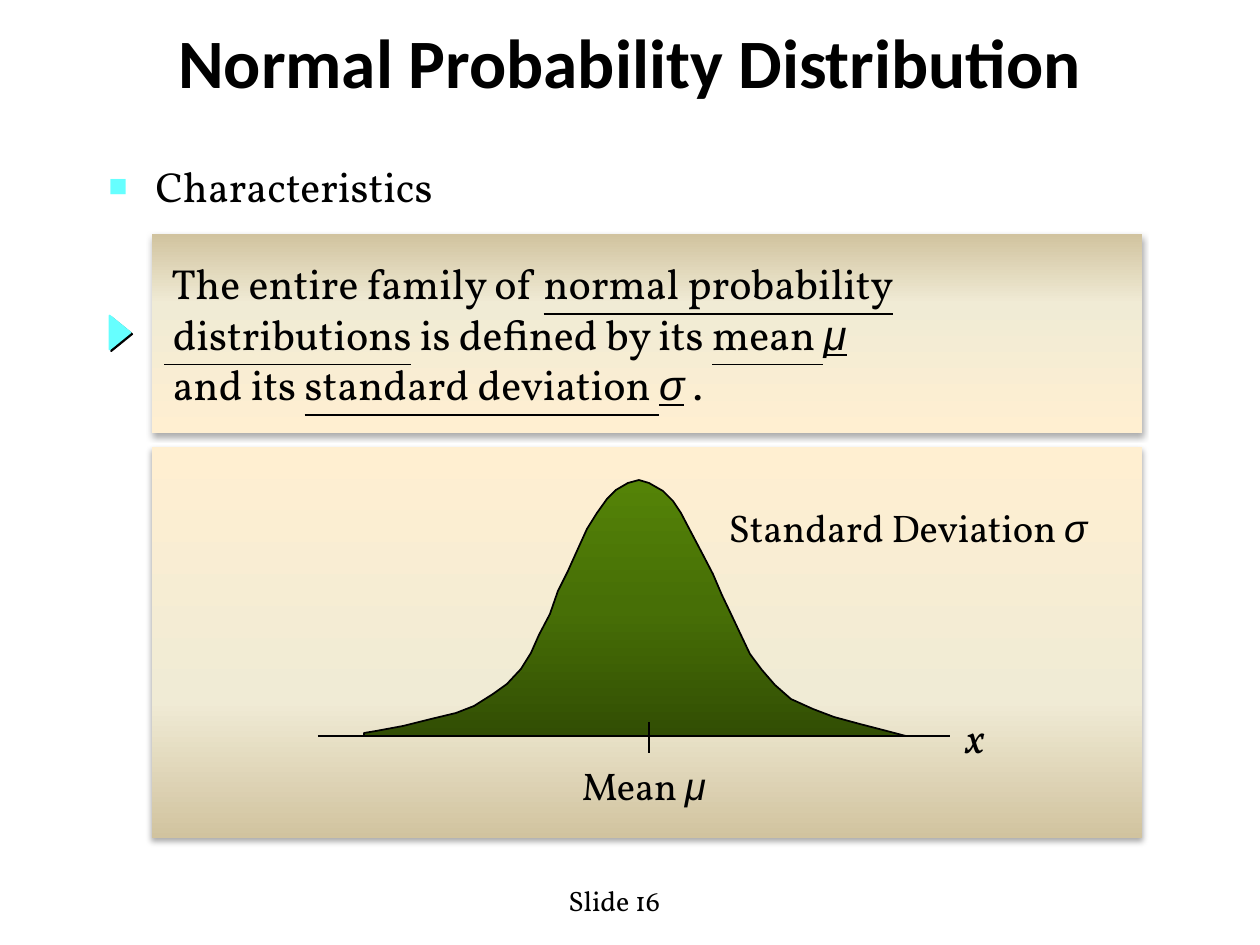
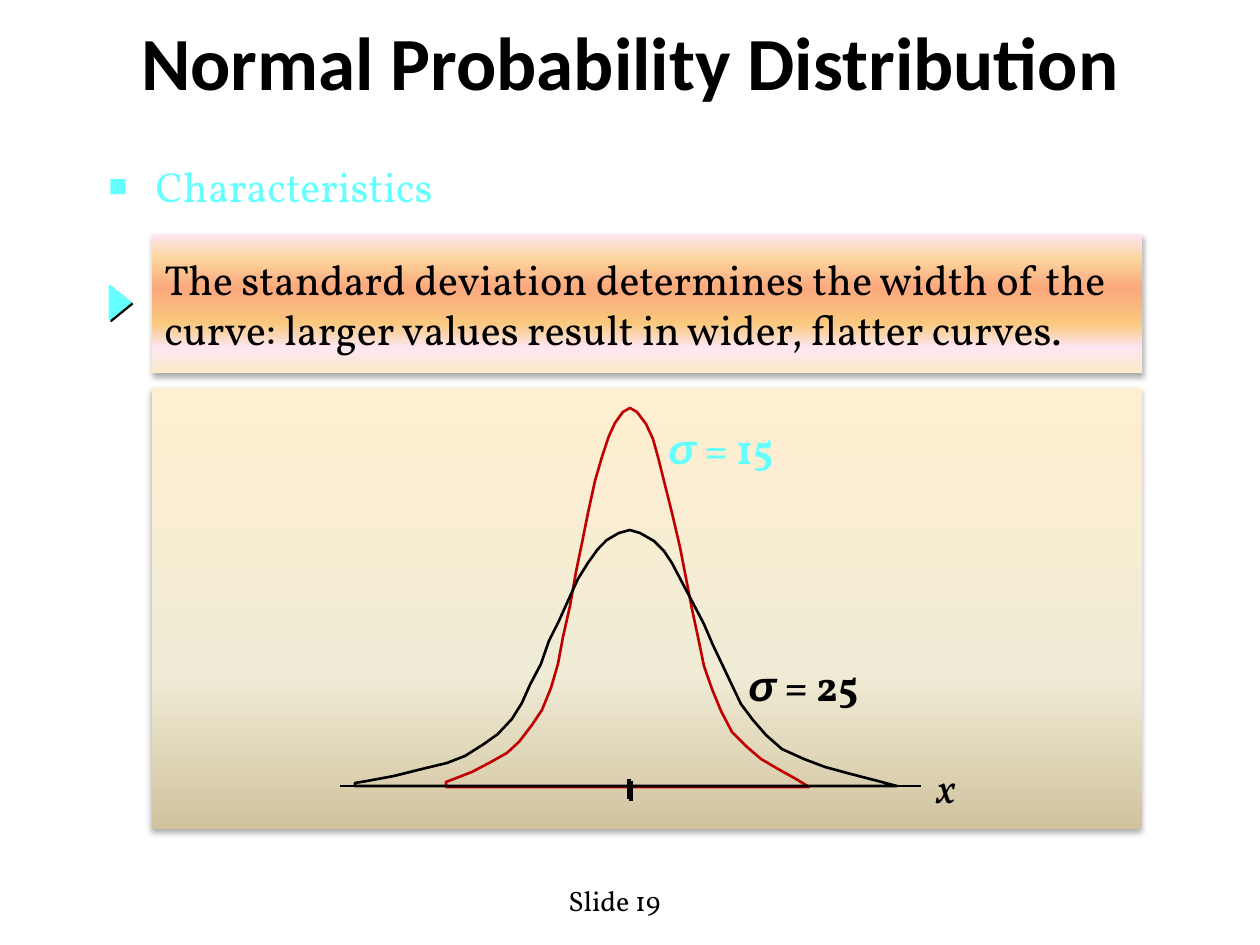
from lxml.etree import SubElement
from pptx import Presentation
from pptx.dml.color import RGBColor
from pptx.enum.shapes import MSO_CONNECTOR, MSO_SHAPE
from pptx.enum.text import MSO_ANCHOR, MSO_AUTO_SIZE, PP_ALIGN
from pptx.oxml.ns import qn
from pptx.util import Pt

PX = 7257  # EMU in one px, 126 px to the inch
SERIF, SANS, SYMBOL = "Vollkorn", "Calibri", "Arial"
BLACK = RGBColor(0x00, 0x00, 0x00)
CYAN = RGBColor(0x66, 0xFF, 0xFF)
RED = RGBColor(0xC0, 0x00, 0x00)
CREAM = RGBColor(0xFF, 0xEF, 0xD1)
IVORY = RGBColor(0xF0, 0xEB, 0xD5)
SAND = RGBColor(0xD1, 0xC3, 0x9F)
WHEAT = RGBColor(0xFB, 0xEA, 0xC7)
PINK = RGBColor(0xFE, 0xE7, 0xF2)
AMBER = RGBColor(0xFA, 0xC7, 0x7D)
CORAL = RGBColor(0xFB, 0xA9, 0x7D)
PEACH = RGBColor(0xFB, 0xD4, 0x9C)
DARK_GREEN = RGBColor(0x32, 0x4E, 0x04)
MID_GREEN = RGBColor(0x47, 0x6F, 0x06)
GREEN = RGBColor(0x54, 0x83, 0x07)

PARCHMENT = [(0, CREAM), (65, IVORY), (100, SAND)]
SUNSET = [(0, WHEAT), (18, PINK), (36, AMBER), (61, CORAL), (82, PEACH), (100, PINK)]
LEAF = [(0, DARK_GREEN), (50, MID_GREEN), (100, GREEN)]
UPWARD, DOWNWARD = 90, 270

# Shadows: alpha %, blur pt, distance pt, direction in degrees
SOFT = (32, 3.5, 2.2, 90)
HARD = (100, 0, 1.4, 45)

# Bell outline in px from its peak: down the left side, back up the right side
BELL = [
    (0, 0), (-11, 3), (-23, 10), (-32, 19), (-42, 33), (-52, 49), (-62, 71),
    (-71, 91), (-81, 111), (-89, 134), (-100, 155), (-108, 173), (-118, 189),
    (-132, 204), (-146, 214), (-165, 226), (-183, 233), (-208, 239),
    (-236, 246), (-263, 251), (-275, 253), (-275, 256),
    (267, 256), (248, 251), (221, 244), (195, 237), (174, 229), (152, 219),
    (136, 205), (123, 190), (111, 174), (102, 155), (93, 136), (83, 115),
    (74, 94), (62, 71), (52, 52), (42, 33), (34, 21), (24, 11), (10, 3),
]


def px(*lengths):
    return [n * PX for n in lengths]


def set_shadow(sp, shadow=None):
    """Replace the theme shadow; call after fill and line are set."""
    effects = SubElement(sp._element.spPr, qn("a:effectLst"))
    if shadow:
        alpha, blur, dist, angle = shadow
        outer = SubElement(effects, qn("a:outerShdw"), blurRad=str(Pt(blur)),
                           dist=str(Pt(dist)), dir=str(angle * 60000),
                           algn="ctr", rotWithShape="0")
        color = SubElement(outer, qn("a:srgbClr"), val=str(BLACK))
        SubElement(color, qn("a:alpha"), val=str(alpha * 1000))


def set_gradient(sp, stops, angle):
    sp.fill.gradient()
    sp.fill.gradient_angle = angle
    gs_list = sp._element.spPr.find(qn("a:gradFill")).find(qn("a:gsLst"))
    for gs in list(gs_list):
        gs_list.remove(gs)
    for position, color in stops:
        gs = SubElement(gs_list, qn("a:gs"), pos=str(position * 1000))
        SubElement(gs, qn("a:srgbClr"), val=str(color))


def write(tf, paragraphs, size, color=BLACK, font=SERIF, bold=False, align=PP_ALIGN.LEFT):
    """Fill tf; a paragraph is a list of (text, marks): u underline, i italic, s symbol."""
    tf.auto_size = MSO_AUTO_SIZE.NONE
    for i, runs in enumerate(paragraphs):
        p = tf.add_paragraph() if i else tf.paragraphs[0]
        p.alignment = align
        p.font.size, p.font.name, p.font.bold = Pt(size), font, bold
        p.font.color.rgb = color
        for text, marks in runs:
            r = p.add_run()
            r.text = text
            if "u" in marks:
                r.font.underline = True
            if "i" in marks or "s" in marks:
                r.font.italic = True
            if "s" in marks:
                r.font.name = SYMBOL


class Deck:
    def __init__(self):
        self.prs = Presentation()
        self.prs.slide_width, self.prs.slide_height = px(1260, 945)

    def new_slide(self, number, title_size, topic_color):
        self.s = self.prs.slides.add_slide(self.prs.slide_layouts[1])
        title, body = self.s.placeholders
        title.left, title.top, title.width, title.height = px(94, 14, 1072, 94)
        title.text_frame.vertical_anchor = MSO_ANCHOR.MIDDLE
        write(title.text_frame, [[("Normal Probability Distribution", "")]],
              title_size, font=SANS, bold=True, align=PP_ALIGN.CENTER)

        body.left, body.top, body.width, body.height = px(96, 154, 492, 64)
        write(body.text_frame, [[("Characteristics", "")]], 24, topic_color)
        pPr = body.text_frame.paragraphs[0]._p.get_or_add_pPr()
        pPr.set("marL", str(47 * PX))
        pPr.set("indent", str(-47 * PX))
        color = pPr.makeelement(qn("a:buClr"), {})
        SubElement(color, qn("a:srgbClr"), val=str(CYAN))
        bullet = [color,
                  pPr.makeelement(qn("a:buSzPct"), {"val": "75000"}),
                  pPr.makeelement(qn("a:buFont"), {"typeface": SYMBOL}),
                  pPr.makeelement(qn("a:buChar"), {"char": "■"})]
        for item in bullet:
            pPr.find(qn("a:defRPr")).addprevious(item)

        self.label(556, 877, 130, [(f"Slide {number}", "")], 16)

    def panel(self, y, height, stops=PARCHMENT, angle=DOWNWARD):
        sp = self.s.shapes.add_shape(MSO_SHAPE.RECTANGLE, *px(152, y, 990, height))
        set_gradient(sp, stops, angle)
        sp.line.fill.background()
        set_shadow(sp, SOFT)
        return sp

    def statement(self, height, stops, lines):
        """Panel with the key sentence and a marker at its left."""
        y = 234
        tf = self.panel(y, height, stops, UPWARD).text_frame
        tf.word_wrap = True
        tf.vertical_anchor = MSO_ANCHOR.MIDDLE
        write(tf, lines, 24)
        marker = self.s.shapes.add_shape(
            MSO_SHAPE.ISOSCELES_TRIANGLE, *px(103, y + height // 2 - 11, 34, 21))
        marker.rotation = 90
        marker.fill.solid()
        marker.fill.fore_color.rgb = CYAN
        marker.line.color.rgb = CYAN
        marker.line.width = Pt(1)
        set_shadow(marker, HARD)

    def bell(self, peak_x, peak_y, color, width, x_scale=1, y_scale=1, stops=None):
        points = [(x * x_scale, y * y_scale) for x, y in BELL]
        builder = self.s.shapes.build_freeform(*points[0], scale=PX)
        builder.add_line_segments(points[1:], close=True)
        sp = builder.convert_to_shape(*px(peak_x, peak_y))
        if stops:
            set_gradient(sp, stops, UPWARD)
        else:
            sp.fill.background()
        sp.line.color.rgb = color
        sp.line.width = Pt(width)
        set_shadow(sp)

    def line(self, x1, y1, x2, y2, width, shadow=None):
        cxn = self.s.shapes.add_connector(MSO_CONNECTOR.STRAIGHT, *px(x1, y1, x2, y2))
        cxn.line.color.rgb = BLACK
        cxn.line.width = Pt(width)
        set_shadow(cxn, shadow)

    def label(self, x, y, width, runs, size, color=BLACK, bold=False, align=PP_ALIGN.LEFT):
        tf = self.s.shapes.add_textbox(*px(x, y, width, 62)).text_frame
        tf.word_wrap = True
        write(tf, [runs], size, color, bold=bold, align=align)

    def axis(self, x1, x2, y):
        self.line(x1, y, x2, y, 1.5)
        self.label(x2 + 2, y - 31, 47, [("x", "i")], 24, align=PP_ALIGN.CENTER)


def main():
    deck = Deck()

    deck.new_slide(16, 39.6, BLACK)
    deck.panel(447, 391)
    deck.statement(199, PARCHMENT, [
        [(" The entire family of ", ""), ("normal probability", "u")],
        [(" distributions", "u"), (" is defined by its ", ""), ("mean ", "u"), ("μ", "us")],
        [(" and its ", ""), ("standard deviation ", "u"), ("σ", "us"), (" .", "")],
    ])
    deck.axis(318, 950, 736)
    deck.bell(639, 480, BLACK, 1, stops=LEAF)
    deck.line(649, 722, 649, 753, 1)
    deck.label(710, 498, 396, [("Standard Deviation ", ""), ("σ", "s")], 22,
               align=PP_ALIGN.CENTER)
    deck.label(562, 756, 164, [("Mean ", ""), ("μ", "s")], 22, align=PP_ALIGN.CENTER)

    deck.new_slide(19, 42.9, CYAN)
    deck.panel(388, 441)
    deck.bell(630, 408, RED, 1.5, x_scale=0.67, y_scale=1.48)
    deck.line(629, 779, 629, 799, 2.25, HARD)
    deck.label(656, 416, 160, [("σ", "s"), (" = 15", "")], 24, CYAN, bold=True)
    deck.label(736, 653, 160, [("σ", "s"), (" = 25", "")], 24, bold=True)
    deck.statement(139, SUNSET, [
        [("The standard deviation determines the width of the", "")],
        [("curve: larger values result in wider, flatter curves.", "")],
    ])
    deck.bell(630, 530, BLACK, 1.5)
    deck.axis(340, 921, 786)

    deck.prs.save("out.pptx")


if __name__ == "__main__":
    main()
